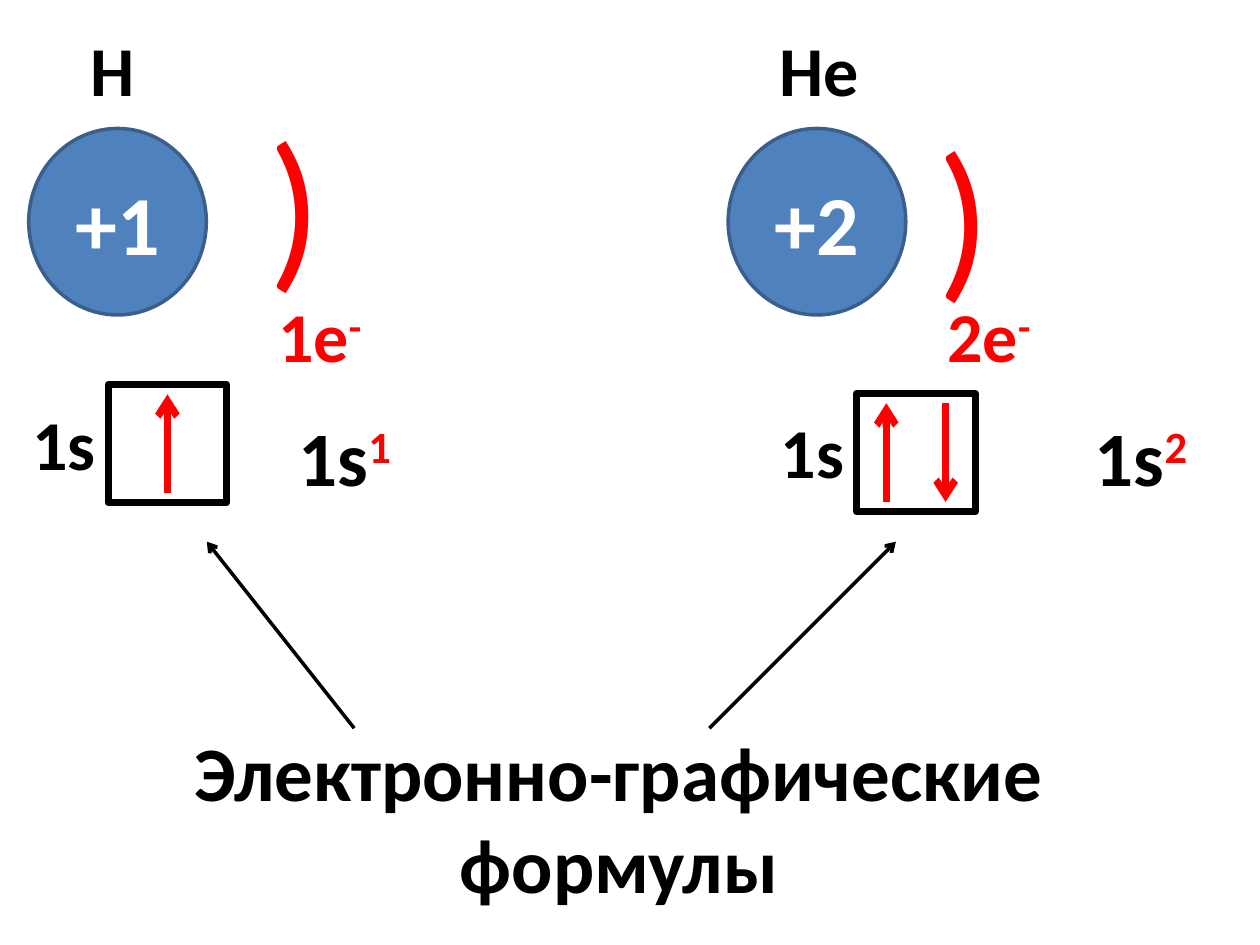
"""Build a slide with the electron diagrams of hydrogen and helium."""
from lxml import etree
from pptx import Presentation
from pptx import util as u
from pptx.dml.color import RGBColor
from pptx.enum import shapes, text
from pptx.oxml.ns import qn

COLORS = {
    "nucleus": "4F81BD",
    "rim": "3A5F8C",
    "electron": "FF0000",
    "ink": "000000",
    "charge": "FFFFFF",
}
FONT = "Calibri"


def color(name):
    return RGBColor.from_string(COLORS[name])


def style_run(run, size, ink, bold=True, raised=False):
    run.font.name = FONT
    run.font.size = u.Pt(size)
    run.font.bold = bold
    run.font.color.rgb = color(ink)
    if raised:
        run._r.get_or_add_rPr().set("baseline", "30000")


def add_label(slide, left, top, width, height, words, size, ink="ink",
              bold=True, power="", power_ink="electron"):
    label = slide.shapes.add_textbox(u.Cm(left), u.Cm(top), u.Cm(width), u.Cm(height))
    frame = label.text_frame
    frame.word_wrap = False
    frame.text = words
    line = frame.paragraphs[0]
    style_run(line.runs[0], size, ink, bold)
    if power:
        exponent = line.add_run()
        exponent.text = power
        style_run(exponent, size, power_ink, bold, raised=True)
    return frame


def add_outline(slide, preset, left, top, width, height, line_ink, weight):
    outline = slide.shapes.add_shape(preset, u.Cm(left), u.Cm(top), u.Cm(width), u.Cm(height))
    outline.shadow.inherit = False
    outline.fill.background()
    outline.line.color.rgb = color(line_ink)
    outline.line.width = u.Pt(weight)
    return outline


def add_nucleus(slide, left, charge):
    nucleus = add_outline(slide, shapes.MSO_SHAPE.OVAL, left, 2.59, 3.58, 3.76, "rim", 2)
    nucleus.fill.solid()
    nucleus.fill.fore_color.rgb = color("nucleus")
    frame = nucleus.text_frame
    frame.vertical_anchor = text.MSO_ANCHOR.MIDDLE
    frame.text = charge
    frame.paragraphs[0].alignment = text.PP_ALIGN.CENTER
    style_run(frame.paragraphs[0].runs[0], 48, "charge")


def add_arrow(slide, start, end, ink, weight):
    arrow = slide.shapes.add_connector(
        shapes.MSO_CONNECTOR.STRAIGHT, *(u.Cm(value) for value in (*start, *end)))
    arrow.line.color.rgb = color(ink)
    arrow.line.width = u.Pt(weight)
    etree.SubElement(arrow.line._get_or_add_ln(), qn("a:tailEnd"), type="arrow")
    etree.SubElement(arrow._element.spPr, qn("a:effectLst"))


def add_orbital(slide, left, top, spins):
    side = 2.39
    add_outline(slide, shapes.MSO_SHAPE.RECTANGLE, left, top, side, side, "ink", 4)
    add_label(slide, left - 1.78, top + 0.19, 1.8, 1.96, "1s", 40)
    high, low = top + 0.2, top + 2.19
    for index, spin in enumerate(spins):
        x = left + side * (2 * index + 1) / (2 * len(spins))
        start, end = (low, high) if spin == "up" else (high, low)
        add_arrow(slide, (x, start), (x, end), "electron", 4)


def add_atom(slide, symbol, symbol_left, nucleus_left, shell, electrons_left,
             orbital, formula_left, spins):
    count = str(len(spins))
    add_nucleus(slide, nucleus_left, "+" + count)
    add_label(slide, *shell, 1.6, 4.52, ")", 100, "electron", bold=False)
    add_label(slide, electrons_left, 5.77, 2.24, 1.96, count + "e", 40, "electron", power="-")
    add_label(slide, symbol_left, 0.41, 2.13, 1.96, symbol, 40)
    add_orbital(slide, *orbital, spins)
    add_label(slide, formula_left, 8.13, 2.45, 2.13, "1s", 44, power=count)


def add_caption(slide):
    frame = add_label(slide, 1.57, 14.48, 21.82, 4.01, "Электронно-графические формулы", 44)
    frame.word_wrap = True
    frame.paragraphs[0].alignment = text.PP_ALIGN.CENTER
    for foot, tip in ((7.14, 4.17), (14.3, 18.06)):
        add_arrow(slide, (foot, 14.68), (tip, 10.92), "ink", 2)


def main():
    deck = Presentation()
    deck.slide_width, deck.slide_height = u.Cm(25.4), u.Cm(19.05)
    slide = deck.slides.add_slide(deck.slide_layouts[6])
    add_atom(slide, "Н", 1.57, 0.58, (5.16, 1.78), 5.36, (2.18, 7.75), 5.77, ["up"])
    add_atom(slide, "He", 15.47, 14.68, (18.64, 1.98), 18.85, (17.27, 7.93), 21.82,
             ["up", "down"])
    add_caption(slide)
    deck.save("out.pptx")


if __name__ == "__main__":
    main()
